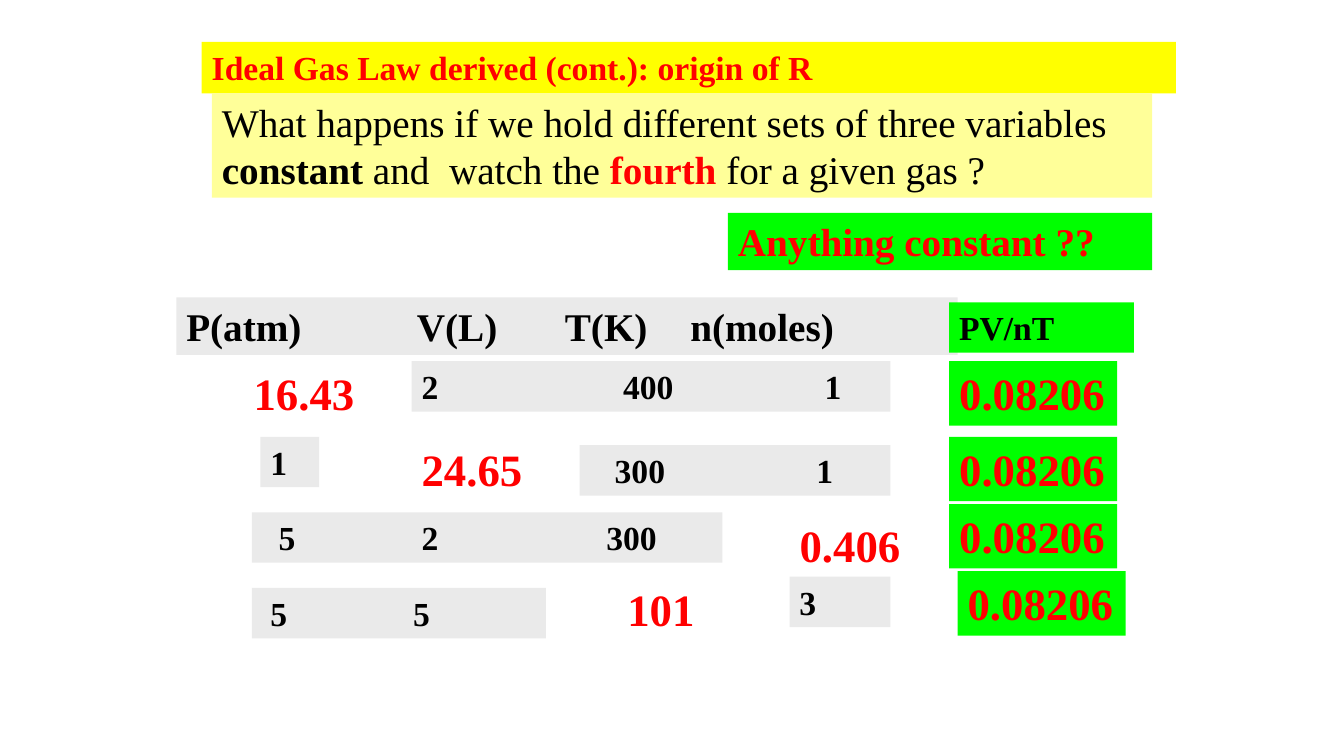
from lxml import etree
from pptx import Presentation
from pptx import util as u
from pptx.dml.color import RGBColor
from pptx.enum import shapes, text
from pptx.oxml.ns import qn

BLACK, RED, GREEN, GRAY = "000000", "FF0000", "00FF00", "EAEAEA"


def color(code):
    return RGBColor.from_string(code)


def dress(box, runs, size, fill=None, stops=()):
    """Fill a box and write (words, colour, bold) runs with tab stops."""
    if fill:
        box.fill.solid()
        box.fill.fore_color.rgb = color(fill)
    frame = box.text_frame
    look = {"word_wrap": True, "auto_size": text.MSO_AUTO_SIZE.NONE,
            "vertical_anchor": text.MSO_ANCHOR.TOP,
            "margin_left": u.Pt(7.2), "margin_right": u.Pt(7.2),
            "margin_top": u.Pt(3.6), "margin_bottom": u.Pt(3.6)}
    for key, val in look.items():
        setattr(frame, key, val)
    para = frame.paragraphs[0]
    para.alignment = text.PP_ALIGN.LEFT
    if stops:
        tabs = etree.SubElement(para._p.get_or_add_pPr(), qn("a:tabLst"))
        for stop in stops:
            etree.SubElement(tabs, qn("a:tab"), pos=str(u.Pt(stop)), algn="l")
    for words, ink, bold in runs:
        run = para.add_run()
        run.text = words
        form = {"name": "Times New Roman", "size": u.Pt(size), "bold": bold}
        for key, val in form.items():
            setattr(run.font, key, val)
        run.font.color.rgb = color(ink)


deck = Presentation()
deck.slide_width, deck.slide_height = u.Pt(960), u.Pt(540)
slide = deck.slides.add_slide(deck.slide_layouts[5])

# Title
title = slide.shapes.title
title.left, title.top, title.width, title.height = map(u.Pt, (144, 30, 696, 36.7))
dress(title, [("Ideal Gas Law derived (cont.): origin of R", RED, True)], 24, "FFFF00")

# Question
ask = [("What happens if we hold different sets of three variables ", BLACK, False),
       ("constant", BLACK, True),
       (" and  watch the ", BLACK, False),
       ("fourth", RED, True),
       (" for a given gas ?", BLACK, False)]

# Filled boxes: place, runs, size, fill, tab stops
bars = [
    ((151.4, 66.5, 671.6, 74.7), ask, 28, "FFFF99", ()),
    ((520, 152, 303, 41), [("Anything constant ??", RED, True)], 28, GREEN, ()),
    ((126, 212.5, 558, 41), [("P(atm)\tV(L)\tT(K)\tn(moles)", BLACK, True)],
     28, GRAY, (164.7, 270.4, 360)),
    ((678, 216, 132, 36), [("PV/nT", BLACK, True)], 24, GREEN, ()),
]

# Values held constant in each trial
held = [
    (294, 258, 342, "2\t400\t1", (144, 288)),
    (186, 312, 42, "1", ()),
    (414, 318, 222, "\t300\t1", (18, 162)),
    (180, 366, 336, "\t5\t2\t300", (12, 114, 246)),
    (180, 420, 210, "\t5\t5", (6, 108)),
    (564, 412, 72, "3", ()),
]
for left, top, wide, words, stops in held:
    bars.append(((left, top, wide, 36), [(words, BLACK, True)], 24, GRAY, stops))

# The same ratio for every trial
for left, top in ((678, 258), (678, 312), (678, 360), (684, 408)):
    bars.append(((left, top, 120, 46), [("0.08206", RED, True)], 32, GREEN, ()))

for place, runs, size, fill, stops in bars:
    bar = slide.shapes.add_shape(shapes.MSO_SHAPE.RECTANGLE, *map(u.Pt, place))
    bar.shadow.inherit = False
    bar.line.fill.background()
    dress(bar, runs, size, fill, stops)

# Fourth variable, found in each trial
found = [(174, 258, 96, "16.43"), (294, 312, 90, "24.65"),
         (564, 366, 90, "0.406"), (441, 412, 78, "101")]
for left, top, wide, words in found:
    box = slide.shapes.add_textbox(*map(u.Pt, (left, top, wide, 46)))
    dress(box, [(words, RED, True)], 32)

deck.save("out.pptx")
